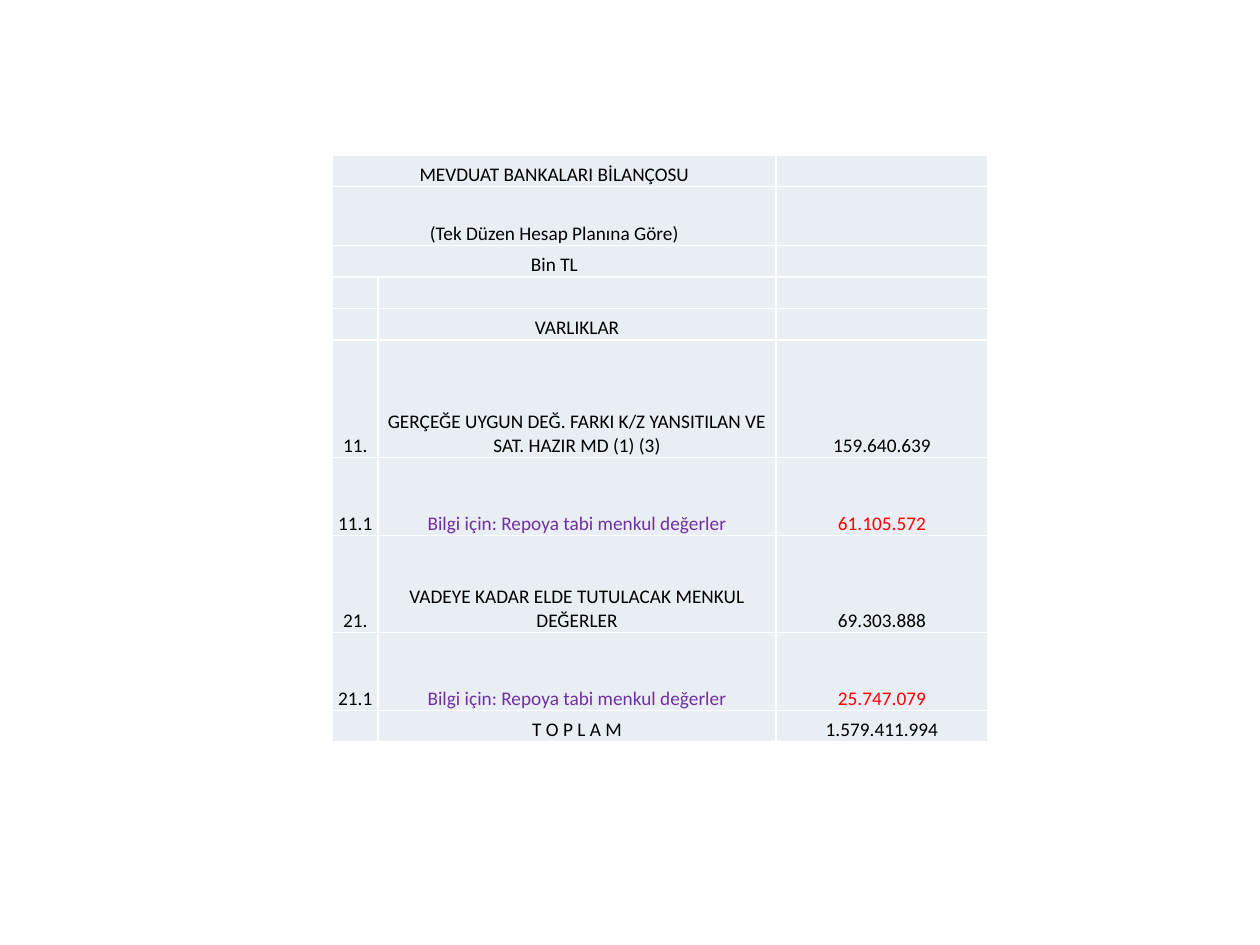
from dataclasses import dataclass

from lxml.etree import SubElement
from pptx import Presentation
from pptx.dml.color import RGBColor
from pptx.enum.text import MSO_ANCHOR, PP_ALIGN
from pptx.oxml.ns import qn
from pptx.util import Inches, Pt


@dataclass(frozen=True)
class Theme:
    font: str = "Calibri"
    size: float = 11
    ink: str = "000000"
    note: str = "7030A0"
    repo: str = "FF0000"
    cell: str = "E9EDF4"
    border: str = "FFFFFF"
    border_width: float = 1


THEME = Theme()
BLANK_LAYOUT = 6
COLUMN_WIDTHS = (0.36, 3.16, 1.68)
REPO_NOTE = "Bilgi için: Repoya tabi menkul değerler"

# Row height, then code, item and amount
HEADINGS = [
    (0.25, "MEVDUAT BANKALARI BİLANÇOSU", "", ""),
    (0.47, "(Tek Düzen Hesap Planına Göre)", "", ""),
    (0.25, "Bin TL", "", ""),
]
ASSETS = [
    (0.25, "", "", ""),
    (0.25, "", "VARLIKLAR", ""),
    (0.93, "11.", "GERÇEĞE UYGUN DEĞ. FARKI K/Z YANSITILAN VE SAT. HAZIR MD (1) (3)", "159.640.639"),
    (0.62, "11.1", REPO_NOTE, "61.105.572"),
    (0.77, "21.", "VADEYE KADAR ELDE TUTULACAK MENKUL DEĞERLER", "69.303.888"),
    (0.62, "21.1", REPO_NOTE, "25.747.079"),
    (0.25, "", "T O P L A M", "1.579.411.994"),
]


def add_borders(cell):
    properties = cell._tc.get_or_add_tcPr()
    for index, side in enumerate(("a:lnL", "a:lnR", "a:lnT", "a:lnB")):
        line = properties.makeelement(qn(side), {"w": str(Pt(THEME.border_width))})
        fill = SubElement(line, qn("a:solidFill"))
        SubElement(fill, qn("a:srgbClr"), val=THEME.border)
        properties.insert(index, line)


def fill_cell(cell, text, color):
    cell.fill.solid()
    cell.fill.fore_color.rgb = RGBColor.from_string(THEME.cell)
    add_borders(cell)
    cell.vertical_anchor = MSO_ANCHOR.BOTTOM
    cell.margin_left = cell.margin_right = cell.margin_top = Inches(0.01)
    cell.margin_bottom = 0
    cell.text_frame.text = text
    para = cell.text_frame.paragraphs[0]
    para.alignment = PP_ALIGN.CENTER
    for span in para.runs:
        span.font.name = THEME.font
        span.font.size = Pt(THEME.size)
        span.font.color.rgb = RGBColor.from_string(color)
    if not text:  # keeps an empty cell from stretching its row
        SubElement(para._p, qn("a:endParaRPr"), sz=str(int(THEME.size * 100)))


def add_balance_sheet(page, left, top):
    rows = HEADINGS + ASSETS
    width = Inches(sum(COLUMN_WIDTHS))
    height = Inches(sum(row[0] for row in rows))
    table = page.shapes.add_table(
        len(rows), len(COLUMN_WIDTHS), left, top, width, height).table
    table.first_row = table.horz_banding = False
    for column, column_width in zip(table.columns, COLUMN_WIDTHS):
        column.width = Inches(column_width)

    for index, (row_height, *texts) in enumerate(rows):
        table.rows[index].height = Inches(row_height)
        is_repo = REPO_NOTE in texts
        colors = (THEME.ink, THEME.note, THEME.repo) if is_repo else (THEME.ink,) * 3
        for column, (text, color) in enumerate(zip(texts, colors)):
            fill_cell(table.cell(index, column), text, color)
        if index < len(HEADINGS):
            table.cell(index, 0).merge(table.cell(index, 1))


def main():
    deck = Presentation()
    deck.slide_width, deck.slide_height = Inches(10), Inches(7.5)
    page = deck.slides.add_slide(deck.slide_layouts[BLANK_LAYOUT])
    add_balance_sheet(page, Inches(2.64), Inches(1.23))
    deck.save("out.pptx")


if __name__ == "__main__":
    main()
